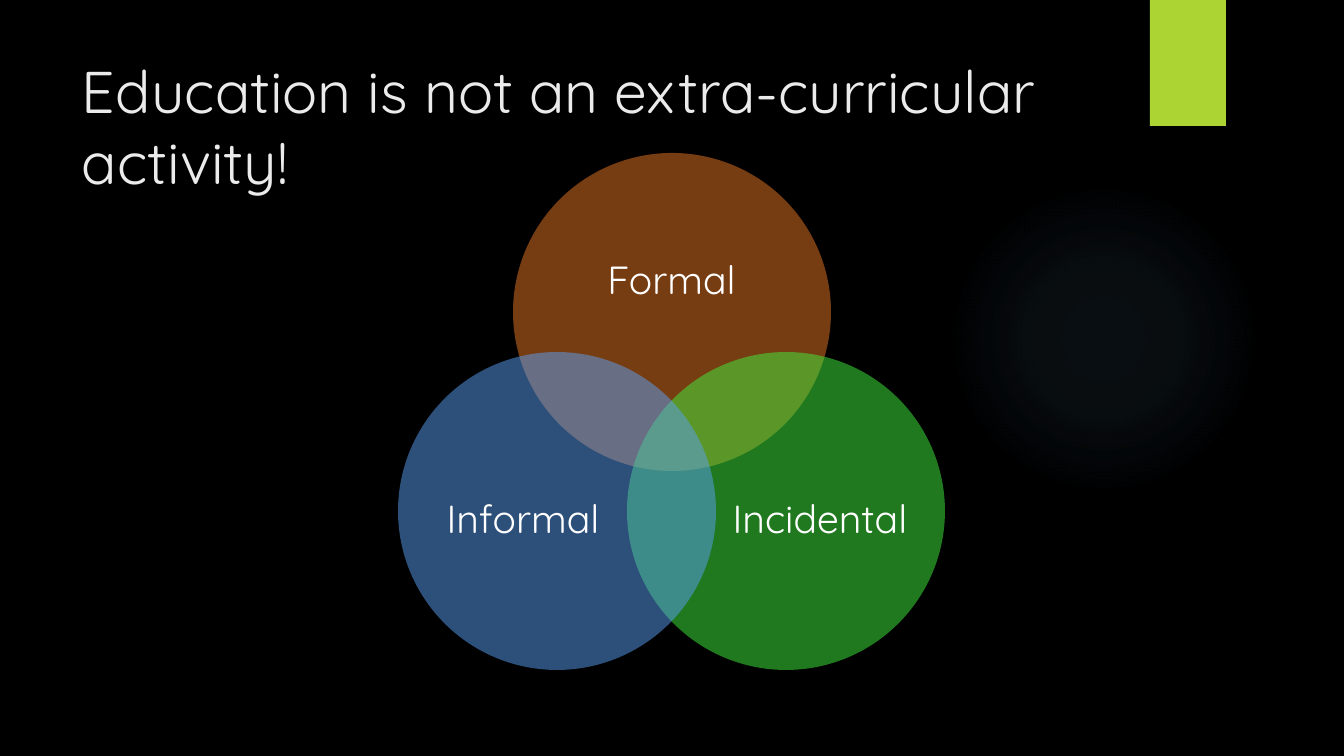
"""Build a slide with a three-circle diagram of kinds of education."""
from dataclasses import dataclass

from pptx import Presentation
from pptx import util as u
from pptx.dml.color import RGBColor
from pptx.enum import shapes, text
from pptx.oxml import parse_xml
from pptx.oxml.ns import nsdecls, qn

EMU_PER_PX = 914400 / 100.8
FONT = "Quicksand"
CIRCLE_SIZE = 318


@dataclass(frozen=True)
class Box:
    """A rectangle in px."""

    left: int
    top: int
    width: int
    height: int

    def emu(self) -> list[u.Emu]:
        """Return the four lengths in EMU."""
        return [px(n) for n in (self.left, self.top, self.width, self.height)]


@dataclass(frozen=True)
class Circle:
    """A labelled translucent circle."""

    name: str
    left: int
    top: int
    color: str
    label: Box


CIRCLES = (
    Circle("Formal", 513, 153, "EF7A24", Box(555, 210, 233, 143)),
    Circle("Incidental", 627, 352, "41F23F", Box(725, 434, 190, 174)),
    Circle("Informal", 398, 352, "5AA0F5", Box(428, 434, 190, 174)),
)


def px(length: int) -> u.Emu:
    """Turn px into EMU."""
    return u.Emu(round(length * EMU_PER_PX))


def rgb(color: str) -> RGBColor:
    """Turn a hex string into a colour."""
    return RGBColor.from_string(color)


def add_shape(page, kind, box: Box, color: str, opacity: int = 100):
    """Draw a filled shape without line or shadow."""
    shape = page.shapes.add_shape(kind, *box.emu())
    shape.shadow.inherit = False
    shape.line.fill.background()
    shape.fill.solid()
    shape.fill.fore_color.rgb = rgb(color)
    if opacity < 100:
        solid = shape._element.spPr.find(qn("a:solidFill"))
        solid[0].append(parse_xml(f'<a:alpha {nsdecls("a")} val="{opacity * 1000}"/>'))
    return shape


def add_glow(page, box: Box, color: str, stops: dict[int, int]) -> None:
    """Draw a circle that fades outwards, with opacity by stop position."""
    glow = add_shape(page, shapes.MSO_SHAPE.OVAL, box, color)
    stop_xml = "".join(
        f'<a:gs pos="{place * 1000}"><a:srgbClr val="{color}">'
        f'<a:alpha val="{opacity * 1000}"/></a:srgbClr></a:gs>'
        for place, opacity in stops.items()
    )
    gradient = parse_xml(
        f'<a:gradFill {nsdecls("a")}><a:gsLst>{stop_xml}</a:gsLst><a:path path="circle">'
        '<a:fillToRect l="50000" t="50000" r="50000" b="50000"/></a:path></a:gradFill>'
    )
    properties = glow._element.spPr
    properties.replace(properties.find(qn("a:solidFill")), gradient)


def add_text(page, box: Box, words: str, size: int, color: str):
    """Write one wrapped paragraph and return its text frame."""
    frame = page.shapes.add_textbox(*box.emu()).text_frame
    frame.word_wrap = True
    para = frame.paragraphs[0]
    para.text = words
    para.font.name = FONT
    para.font.size = u.Pt(size)
    para.font.color.rgb = rgb(color)
    return frame


def add_circle(page, circle: Circle) -> None:
    """Draw a circle with its centred label."""
    outline = Box(circle.left, circle.top, CIRCLE_SIZE, CIRCLE_SIZE)
    add_shape(page, shapes.MSO_SHAPE.OVAL, outline, circle.color, 50)
    frame = add_text(page, circle.label, circle.name, 28, "FFFFFF")
    frame.margin_left = frame.margin_right = frame.margin_top = frame.margin_bottom = 0
    frame.vertical_anchor = text.MSO_ANCHOR.MIDDLE
    frame.paragraphs[0].alignment = text.PP_ALIGN.CENTER
    frame.paragraphs[0].line_spacing = 0.9


def main() -> None:
    """Build and save the deck."""
    deck = Presentation()
    deck.slide_width, deck.slide_height = px(1344), px(756)
    page = deck.slides.add_slide(deck.slide_layouts[6])
    page.background.fill.solid()
    page.background.fill.fore_color.rgb = rgb("000000")
    add_glow(page, Box(949, 184, 310, 310), "7AC4F0", {0: 7, 36: 6, 69: 0})
    add_shape(page, shapes.MSO_SHAPE.RECTANGLE, Box(1150, 0, 76, 126), "ACD433")
    title = "Education is not an extra-curricular activity!"
    add_text(page, Box(72, 50, 1037, 154), title, 42, "EBEBEB")
    for circle in CIRCLES:
        add_circle(page, circle)
    deck.save("out.pptx")


if __name__ == "__main__":
    main()
